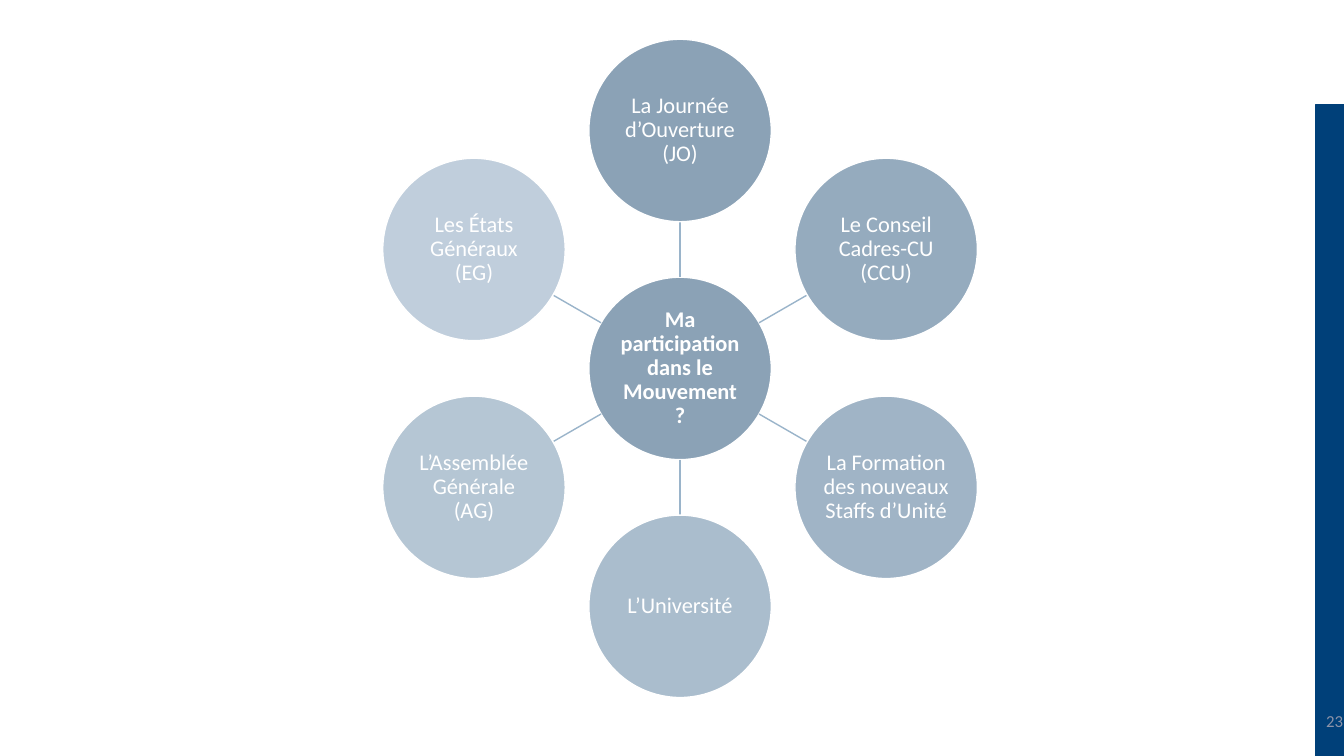
import math
from dataclasses import dataclass

import pptx
import pptx.dml.color
import pptx.enum.shapes
import pptx.enum.text
import pptx.oxml.ns
import pptx.util
from lxml import etree

HUES = {
    "navy": "004079", "white": "FFFFFF", "grey": "8C93A8", "spoke": "9AB4CA",
    "hub": "8BA2B6", "jo": "8BA2B6", "ccu": "95ABBE", "staff": "A0B4C6",
    "uni": "AABDCD", "ag": "B5C6D4", "eg": "C0CEDC",
}
WIDE = pptx.util.Inches(13.33)
HIGH = pptx.util.Inches(7.5)
SHAPE = pptx.enum.shapes.MSO_SHAPE
ALIGN = pptx.enum.text.PP_ALIGN
MID = pptx.enum.text.MSO_ANCHOR.MIDDLE


def across(share: float) -> int:
    """Percent of the slide's width."""
    return round(WIDE * share / 100)


def down(share: float) -> int:
    """Percent of the slide's height."""
    return round(HIGH * share / 100)


# Wheel: hub centre, ring radius and disc size
MIDX, MIDY = across(50.6), down(48.73)
RING, DISC = down(31.47), down(24.13)


@dataclass
class Disc:
    text: str
    hue: str
    bold: bool = False


HUB = Disc("Ma participation dans le Mouvement ?", "hub", True)
RIM = [
    Disc("La Journée d’Ouverture (JO)", "jo"),
    Disc("Le Conseil Cadres-CU (CCU)", "ccu"),
    Disc("La Formation des nouveaux Staffs d’Unité", "staff"),
    Disc("L’Université", "uni"),
    Disc("L’Assemblée Générale (AG)", "ag"),
    Disc("Les États Généraux (EG)", "eg"),
]


def tint(name: str) -> pptx.dml.color.RGBColor:
    return pptx.dml.color.RGBColor.from_string(HUES[name])


def spot(turn: float, reach: float) -> tuple[int, int]:
    """Point at an angle clockwise from the top of the wheel."""
    return (round(MIDX + reach * math.sin(turn)),
            round(MIDY - reach * math.cos(turn)))


def block(slide, kind, box: tuple[int, int, int, int], fill: str, edge: str):
    shape = slide.shapes.add_shape(kind, *box)
    shape.shadow.inherit = False
    shape.fill.solid()
    shape.fill.fore_color.rgb = tint(fill)
    shape.line.color.rgb = tint(edge)
    shape.line.width = pptx.util.Pt(1)
    return shape


def write(frame, text: str, size: int, hue: str, side, bold: bool = False):
    frame.word_wrap = True
    frame.vertical_anchor = MID
    para = frame.paragraphs[0]
    para.alignment = side
    run = para.add_run()
    run.text = text
    run.font.name = "Calibri"
    run.font.size = pptx.util.Pt(size)
    run.font.bold = bold
    run.font.color.rgb = tint(hue)
    return para


def draw(slide, disc: Disc, mid: tuple[int, int]) -> None:
    box = (mid[0] - DISC // 2, mid[1] - DISC // 2, DISC, DISC)
    frame = block(slide, SHAPE.OVAL, box, disc.hue, "white").text_frame
    frame.margin_left = frame.margin_right = pptx.util.Inches(0.01)
    frame.margin_top = frame.margin_bottom = pptx.util.Inches(0.01)
    para = write(frame, disc.text, 16, "white", ALIGN.CENTER, disc.bold)
    para.line_spacing = 0.9


def spoke(slide, turn: float) -> None:
    kind = pptx.enum.shapes.MSO_CONNECTOR.STRAIGHT
    ends = spot(turn, DISC / 2) + spot(turn, RING - DISC / 2)
    line = slide.shapes.add_connector(kind, *ends)
    line.line.color.rgb = tint("spoke")
    line.line.width = pptx.util.Pt(1)
    etree.SubElement(line._element.spPr, pptx.oxml.ns.qn("a:effectLst"))


def main() -> None:
    deck = pptx.Presentation()
    deck.slide_width, deck.slide_height = WIDE, HIGH
    slide = deck.slides.add_slide(deck.slide_layouts[6])

    # Side band and page number
    left, top = across(97.9), down(13.87)
    band = (left, top, WIDE - left, HIGH - top)
    block(slide, SHAPE.RECTANGLE, band, "navy", "navy")
    page = slide.shapes.add_textbox(
        across(78.17), down(92.67), across(22.5), down(5.33))
    write(page.text_frame, "23", 12, "grey", ALIGN.RIGHT)

    # Hub, then spokes and discs clockwise from the top
    draw(slide, HUB, (MIDX, MIDY))
    for step, disc in enumerate(RIM):
        turn = step * math.tau / len(RIM)
        spoke(slide, turn)
        draw(slide, disc, spot(turn, RING))

    deck.save("out.pptx")


if __name__ == "__main__":
    main()
